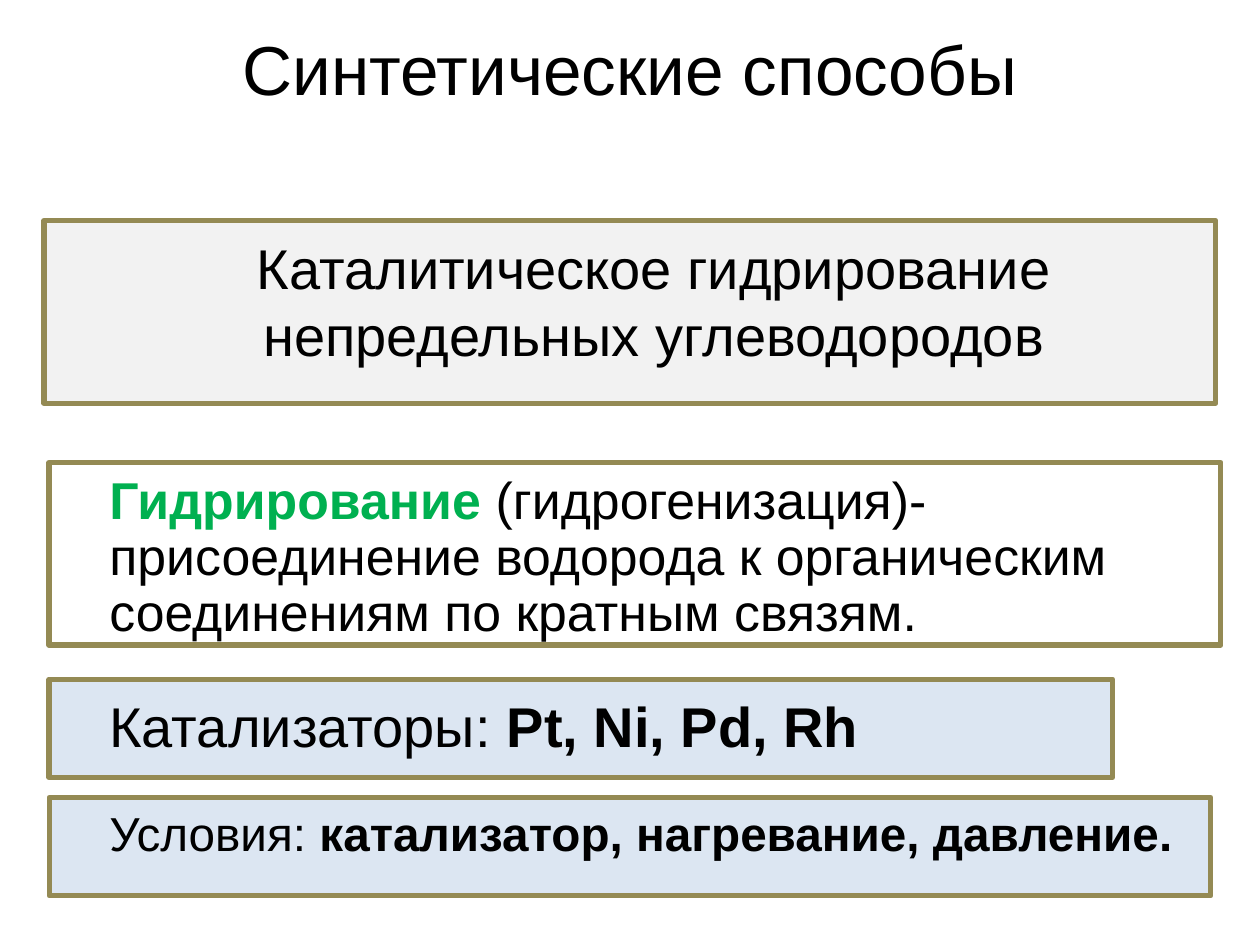
from dataclasses import dataclass

from pptx import Presentation
from pptx.dml.color import RGBColor
from pptx.enum.shapes import MSO_SHAPE
from pptx.enum.text import MSO_ANCHOR, PP_ALIGN
from pptx.util import Inches, Pt


@dataclass(frozen=True)
class Theme:
    """Colours, font and type sizes of the slide."""
    font: str = "Arial"
    ink: str = "000000"
    term: str = "00B050"
    edge: str = "948A54"
    gray: str = "F2F2F2"
    white: str = "FFFFFF"
    blue: str = "DCE6F2"
    title: float = 39.6
    large: float = 32
    body: float = 29.6
    small: float = 27.2


THEME = Theme()
LEFT = 0.39
WIDE = 9.3
TALL = 1.45
LOW = 0.78


def write(frame, runs, size, align=PP_ALIGN.LEFT, indent=0, lead=1.0):
    """Fill a frame with one paragraph of (text, bold, colour) runs."""
    frame.word_wrap = True
    para = frame.paragraphs[0]
    para.alignment = align
    para.line_spacing = lead
    para.space_before = Pt(0)
    props = para._p.get_or_add_pPr()
    props.set("marL", str(Inches(indent)))
    props.set("indent", "0")
    for text, bold, color in runs:
        run = para.add_run()
        run.text = text
        font = run.font
        font.name, font.size, font.bold = THEME.font, Pt(size), bold
        font.color.rgb = RGBColor.from_string(color)


def place(shape, left, top, width, height):
    """Move and size a shape in inches."""
    shape.left, shape.top = Inches(left), Inches(top)
    shape.width, shape.height = Inches(width), Inches(height)


def head(slide, text):
    """Format the title placeholder."""
    title = slide.shapes.title
    place(title, 0.5, 0.3, 9, 0.48)
    title.text_frame.vertical_anchor = MSO_ANCHOR.MIDDLE
    write(title.text_frame, [(text, False, THEME.ink)], THEME.title,
          align=PP_ALIGN.CENTER)


def panel(slide, area, fill, runs, size, **style):
    """Add a framed rectangle with text."""
    left, top, width, height = map(Inches, area)
    box = slide.shapes.add_shape(MSO_SHAPE.RECTANGLE, left, top, width, height)
    box.shadow.inherit = False
    box.fill.solid()
    box.fill.fore_color.rgb = RGBColor.from_string(fill)
    box.line.color.rgb = RGBColor.from_string(THEME.edge)
    box.line.width = Pt(3)
    box.text_frame.vertical_anchor = MSO_ANCHOR.TOP
    box.text_frame.margin_top = Inches(0.1)
    write(box.text_frame, runs, size, indent=0.38, **style)


def main():
    """Build and save the slide."""
    deck = Presentation()
    deck.slide_width, deck.slide_height = Inches(10), Inches(7.5)
    slide = deck.slides.add_slide(deck.slide_layouts[5])
    ink = THEME.ink
    head(slide, "Синтетические способы")
    panel(slide, (0.35, 1.75, WIDE, TALL), THEME.gray,
          [("Каталитическое гидрирование непредельных углеводородов", False, ink)],
          THEME.large, align=PP_ALIGN.CENTER)
    panel(slide, (LEFT, 3.67, WIDE, TALL), THEME.white,
          [("Гидрирование", True, THEME.term),
           (" (гидрогенизация)-присоединение водорода к органическим "
            "соединениям по кратным связям.", False, ink)],
          THEME.body, lead=0.9)
    panel(slide, (LEFT, 5.39, 8.44, LOW), THEME.blue,
          [("Катализаторы: ", False, ink), ("Pt, Ni, Pd, Rh", True, ink)],
          THEME.large)
    panel(slide, (LEFT, 6.33, 9.22, LOW), THEME.blue,
          [("Условия: ", False, ink),
           ("катализатор, нагревание, давление.", True, ink)],
          THEME.small, lead=0.9)
    deck.save("out.pptx")


if __name__ == "__main__":
    main()
